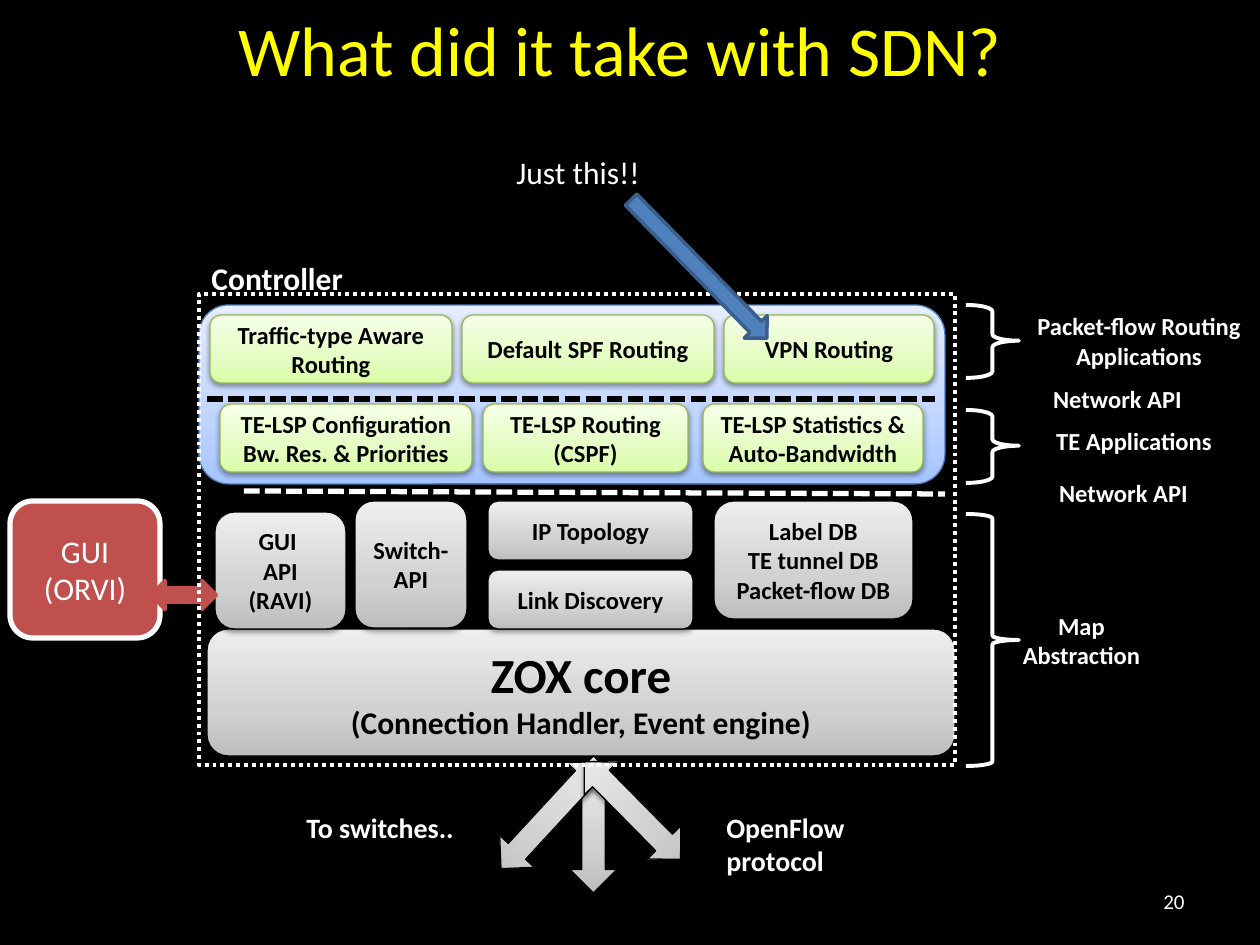
from dataclasses import dataclass

from lxml.etree import SubElement
from pptx import Presentation
from pptx.dml.color import RGBColor
from pptx.enum.dml import MSO_LINE
from pptx.enum.shapes import MSO_CONNECTOR, MSO_SHAPE
from pptx.enum.text import MSO_ANCHOR, PP_ALIGN
from pptx.oxml.ns import qn
from pptx.util import Emu, Pt

EMU_PER_PX = 914400 / 126
FONT = "Calibri"
COLORS = {
    "black": "000000", "white": "FFFFFF", "title": "FFFF00",
    "red": "C0504D", "blue": "4F81BD", "blue edge": "3A5F8C",
    "panel edge": "4B7EBC", "green edge": "98B955",
}
GRADIENTS = {
    "panel": ("A4C4FF", "BFD4FF", "E6EEFF"),
    "gray": ("BDBDBD", "D1D1D1", "EEEEEE"),
    "green": ("DAFDA7", "E4FCC2", "F5FFE7"),
}
STOPS = (0, 35000, 100000)


@dataclass(frozen=True)
class Style:
    fill: str | None = None
    edge: str | None = None
    weight: float = 0.75
    dash: MSO_LINE | None = None
    shadow: bool = False
    ink: str = "white"
    bold: bool = True


@dataclass(frozen=True)
class Block:
    box: tuple[int, int, int, int]
    style: Style
    lines: tuple[str, ...] = ()
    sizes: tuple[int, ...] = (14,)
    geometry: MSO_SHAPE = MSO_SHAPE.ROUNDED_RECTANGLE
    turn: float = 0
    adjust: tuple[float, ...] = ()


@dataclass(frozen=True)
class Label:
    box: tuple[int, int, int, int]
    text: str
    size: int = 14
    align: PP_ALIGN = PP_ALIGN.CENTER
    bold: bool = True
    ink: str = "white"
    anchor: MSO_ANCHOR = MSO_ANCHOR.TOP


@dataclass(frozen=True)
class Divider:
    start: tuple[int, int]
    end: tuple[int, int]
    ink: str


PANEL = Style("panel", "panel edge", shadow=True)
GRAY = Style("gray", "black", shadow=True, ink="black")
GREEN = Style("green", "green edge", shadow=True, ink="black")
GUI = Style("red", "white", 3, shadow=True, bold=False)
GUI_LINK = Style("red", "red", 2)
FRAME = Style(edge="white", weight=2.25, dash=MSO_LINE.ROUND_DOT)
BRACE = Style(edge="white", weight=2.25)
POINTER = Style("blue", "blue edge", 2)
PLAIN = Style()

UP_DOWN = MSO_SHAPE.UP_DOWN_ARROW


def app(left: int, top: int, width: int, text: str) -> Block:
    return Block((left, top, width, 68), GREEN, (text,))


def service(left: int, top: int, width: int, height: int, *lines: str) -> Block:
    return Block((left, top, width, height), GRAY, lines)


def brace(top: int, height: int, *adjust: float) -> Block:
    return Block((966, top, 53, height), BRACE,
                 geometry=MSO_SHAPE.RIGHT_BRACE, adjust=adjust)


ROUTING_TOP, TE_TOP, SERVICE_TOP = 315, 404, 501

CONTENT = (
    Block((199, 305, 746, 179), PANEL),
    Block((207, 629, 748, 127), GRAY,
          ("ZOX core", "(Connection Handler, Event engine)"), (28, 18)),
    service(355, SERVICE_TOP, 112, 127, "Switch-", "API"),
    service(215, 512, 131, 117, "GUI ", "API", "(RAVI)"),
    Block((10, SERVICE_TOP, 150, 137), GUI, ("GUI", "(ORVI)"), (18,)),
    Block((570, 756, 47, 137), GRAY, geometry=UP_DOWN),
    Block((527, 742, 47, 146), GRAY, geometry=UP_DOWN, turn=42.7),
    Block((609, 742, 47, 137), GRAY, geometry=UP_DOWN, turn=315.4),
    Label((714, 804, 214, 83), "OpenFlow protocol", 16, PP_ALIGN.LEFT),
    Label((294, 804, 214, 48), "To switches..", 16, PP_ALIGN.LEFT),
    Block((169, 562, 29, 66), GUI_LINK, geometry=UP_DOWN, turn=90),
    service(488, 570, 205, 59, "Link Discovery"),
    service(488, SERVICE_TOP, 205, 59, "IP Topology"),
    app(483, TE_TOP, 205, "TE-LSP Routing (CSPF)"),
    Block((199, 294, 756, 471), FRAME, geometry=MSO_SHAPE.RECTANGLE),
    Divider((244, 491), (945, 494), "white"),
    app(220, TE_TOP, 252, "TE-LSP Configuration Bw. Res. & Priorities"),
    service(714, SERVICE_TOP, 199, 118,
            "Label DB", "TE tunnel DB", "Packet-flow DB"),
    Label((199, 253, 243, 52), "Controller", 18, PP_ALIGN.LEFT),
    Label((1029, 420, 210, 43), "TE Applications"),
    brace(514, 252),
    Block((987, 546, 189, 189), PLAIN, ("Map Abstraction",)),
    brace(410, 73, 0.12, 0.49),
    Label((1029, 472, 189, 43), "Network API"),
    app(703, TE_TOP, 220, "TE-LSP Statistics & Auto-Bandwidth"),
    Divider((207, 399), (935, 399), "black"),
    Label((1018, 378, 199, 43), "Network API"),
    app(462, ROUTING_TOP, 252, "Default SPF Routing"),
    app(724, ROUTING_TOP, 210, "VPN Routing"),
    app(210, ROUTING_TOP, 242, "Traffic-type Aware Routing"),
    brace(305, 73, 0.12, 0.49),
    Label((1018, 305, 242, 72), "Packet-flow Routing Applications"),
    Label((53, 0, 1134, 84), "What did it take with SDN?", 40,
          bold=False, ink="title"),
    Block((602, 253, 194, 32), POINTER, geometry=MSO_SHAPE.LEFT_ARROW, turn=225.6),
    Label((504, 147, 336, 53), "Just this!!", 18, PP_ALIGN.LEFT, False),
    Label((903, 876, 294, 50), "20", 12, PP_ALIGN.RIGHT, False,
          anchor=MSO_ANCHOR.MIDDLE),
)


def px(*lengths: int) -> list[Emu]:
    return [Emu(round(length * EMU_PER_PX)) for length in lengths]


def rgb(name: str) -> RGBColor:
    return RGBColor.from_string(COLORS[name])


def write(frame, lines, sizes, ink: str, bold: bool, align, anchor) -> None:
    frame.word_wrap = True
    frame.vertical_anchor = anchor
    for index, line in enumerate(lines):
        paragraph = frame.add_paragraph() if index else frame.paragraphs[0]
        paragraph.alignment = align
        run = paragraph.add_run()
        run.text = line
        run.font.name = FONT
        run.font.size = Pt(sizes[min(index, len(sizes) - 1)])
        run.font.bold = bold
        run.font.color.rgb = rgb(ink)


def paint(shape, fill: str | None) -> None:
    if fill is None:
        shape.fill.background()
    elif fill in GRADIENTS:
        shape.fill.gradient()
        shape.fill.gradient_angle = 90
        stops = next(shape._element.spPr.iter(qn("a:gsLst")))
        for stop in list(stops):
            stops.remove(stop)
        for position, color in zip(STOPS, GRADIENTS[fill]):
            stop = SubElement(stops, qn("a:gs"), pos=str(position))
            SubElement(stop, qn("a:srgbClr"), val=color)
    else:
        shape.fill.solid()
        shape.fill.fore_color.rgb = rgb(fill)


def cast_shadow(shape) -> None:
    effects = shape._element.spPr.find(qn("a:effectLst"))
    shadow = SubElement(effects, qn("a:outerShdw"), blurRad="40000",
                        dist="20000", dir="5400000", rotWithShape="0")
    color = SubElement(shadow, qn("a:srgbClr"), val=COLORS["black"])
    SubElement(color, qn("a:alpha"), val="38000")


def draw_block(slide, block: Block) -> None:
    style = block.style
    shape = slide.shapes.add_shape(block.geometry, *px(*block.box))
    shape.rotation = block.turn
    for index, value in enumerate(block.adjust):
        shape.adjustments[index] = value
    paint(shape, style.fill)
    if style.edge:
        shape.line.color.rgb = rgb(style.edge)
        shape.line.width = Pt(style.weight)
        if style.dash:
            shape.line.dash_style = style.dash
    else:
        shape.line.fill.background()
    shape.shadow.inherit = False
    if style.shadow:
        cast_shadow(shape)
    write(shape.text_frame, block.lines, block.sizes, style.ink, style.bold,
          PP_ALIGN.CENTER, MSO_ANCHOR.MIDDLE)


def draw_label(slide, label: Label) -> None:
    frame = slide.shapes.add_textbox(*px(*label.box)).text_frame
    write(frame, (label.text,), (label.size,), label.ink, label.bold,
          label.align, label.anchor)


def draw_divider(slide, divider: Divider) -> None:
    line = slide.shapes.add_connector(
        MSO_CONNECTOR.STRAIGHT, *px(*divider.start, *divider.end))
    line.line.color.rgb = rgb(divider.ink)
    line.line.width = Pt(3)
    line.line.dash_style = MSO_LINE.SQUARE_DOT
    SubElement(line._element.spPr, qn("a:effectLst"))


DRAW = {Block: draw_block, Label: draw_label, Divider: draw_divider}


def main() -> None:
    deck = Presentation()
    deck.slide_width, deck.slide_height = px(1260, 945)
    slide = deck.slides.add_slide(deck.slide_layouts[6])
    slide.background.fill.solid()
    slide.background.fill.fore_color.rgb = rgb("black")
    for part in CONTENT:
        DRAW[type(part)](slide, part)
    deck.save("out.pptx")


if __name__ == "__main__":
    main()
